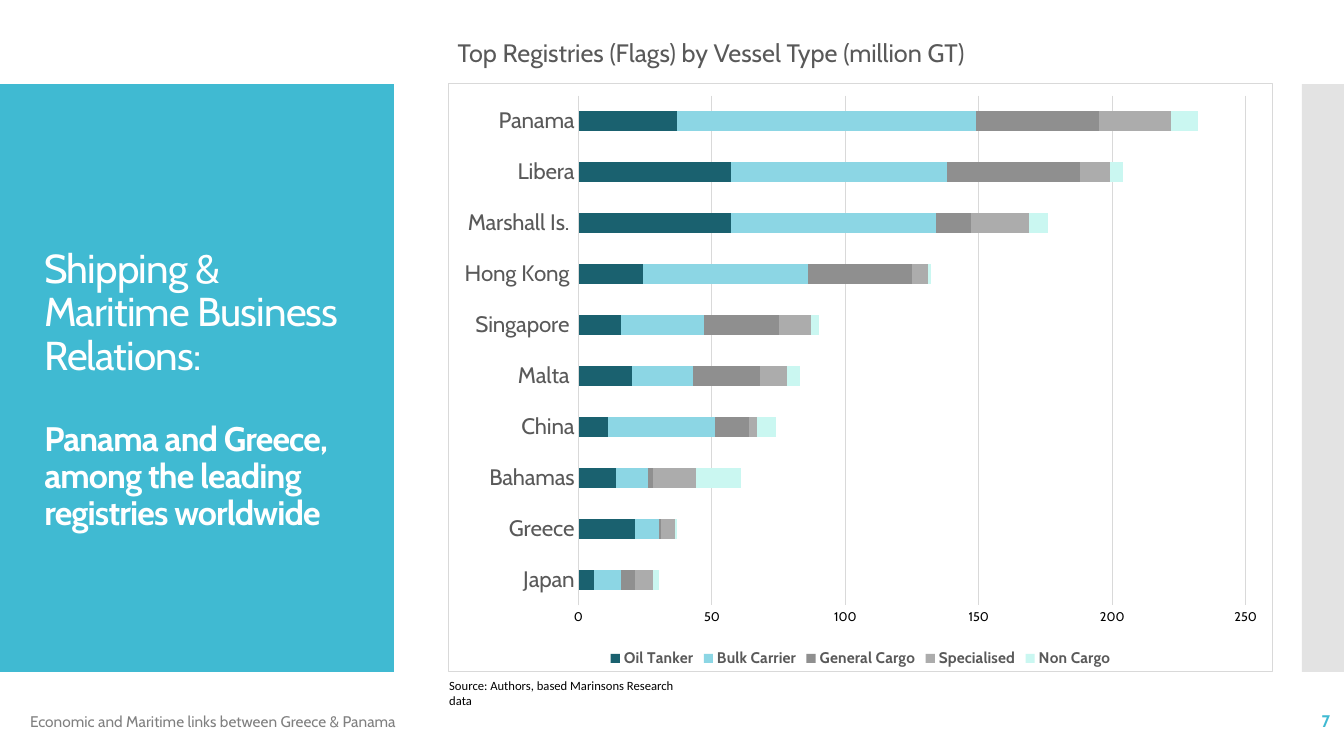
"""Build the slide on top ship registries by vessel type."""
from lxml import etree
from pptx import Presentation
from pptx.chart.data import CategoryChartData
from pptx.dml.color import RGBColor
from pptx.enum.chart import XL_CHART_TYPE as ChartType, XL_LEGEND_POSITION as LegendPosition
from pptx.enum.chart import XL_TICK_MARK as TickMark
from pptx.enum.shapes import MSO_SHAPE as Preset
from pptx.enum.text import MSO_ANCHOR as Anchor, PP_ALIGN as Align
from pptx.oxml import parse_xml
from pptx.oxml.ns import nsdecls, qn
from pptx.util import Inches, Pt

COLORS = {
    "white": "FFFFFF", "teal": "40BAD2", "strip": "C8C8C8", "text": "595959",
    "footer": "808080", "black": "000000", "rule": "D9D9D9",
}
FONT = "Cabin"
TITLE = "Shipping & Maritime Business Relations:"
SUBTITLE = "Panama and Greece, among the leading registries worldwide"
HEADING = "Top Registries (Flags) by Vessel Type (million GT)"
SOURCE = "Source: Authors, based Marinsons Research data"
FOOTER = "Economic and Maritime links between Greece & Panama"
PAGE = "7"

REGISTRIES = ["Japan", "Greece", "Bahamas", "China", "Malta ", "Singapore ",
              "Hong Kong ", "Marshall Is. ", "Libera", "Panama"]
VESSELS = [
    ("Oil Tanker", "1A616F", [6, 21, 14, 11, 20, 16, 24, 57, 57, 37]),
    ("Bulk Carrier", "8CD6E4", [10, 9, 12, 40, 23, 31, 62, 77, 81, 112]),
    ("General Cargo", "8F8F8F", [5, 1, 2, 13, 25, 28, 39, 13, 50, 46]),
    ("Specialised", "ACACAC", [7, 5, 16, 3, 10, 12, 6, 22, 11, 27]),
    ("Non Cargo", "CAF7F1", [2, 1, 17, 7, 5, 3, 1, 7, 5, 10]),
]

COLUMNS, ROWS = 32, 18
AREAS = {
    "panel": (0, 2, 9.38, 14),
    "strip": (31, 2, 1, 14),
    "title": (0.82, 5.28, 7.73, 8),
    "heading": (10.66, 0.86, 13, 1),
    "chart": (10.66, 1.97, 19.66, 14.04),
    "source": (10.46, 16.03, 6.36, 0.6),
    "page": (27.91, 16.68, 4, 0.96),
    "footer": (0.48, 16.7, 15.5, 0.96),
}
PLOT_SHARE = {"x": 0.158, "y": 0.021, "w": 0.809, "h": 0.866}

presentation = Presentation()
presentation.slide_width, presentation.slide_height = Inches(13.33), Inches(7.5)
slide = presentation.slides.add_slide(presentation.slide_layouts[6])


def place(name):
    left, top, width, height = AREAS[name]
    column = presentation.slide_width / COLUMNS
    row = presentation.slide_height / ROWS
    return int(left * column), int(top * row), int(width * column), int(height * row)


def rgb(name):
    return RGBColor.from_string(COLORS.get(name, name))


def style_font(font, size, color, bold=False, name=FONT):
    font.size, font.bold, font.name = Pt(size), bold, name
    font.color.rgb = rgb(color)


def add_block(name, color, opacity=100):
    block = slide.shapes.add_shape(Preset.RECTANGLE, *place(name))
    block.shadow.inherit = False
    block.fill.solid()
    block.fill.fore_color.rgb = rgb(color)
    block.line.fill.background()
    if opacity < 100:
        tint = block.fill._xPr.find(qn("a:solidFill"))[0]
        etree.SubElement(tint, qn("a:alpha")).set("val", str(opacity * 1000))


def add_text(text, area=None, frame=None, size=11, color="text", bold=False, font=FONT,
             align=Align.LEFT, anchor=Anchor.TOP, wrap=True, line=1.0, before=0, tracking=0):
    if frame is None:
        frame = slide.shapes.add_textbox(*place(area)).text_frame
        frame.word_wrap, frame.vertical_anchor = wrap, anchor
        paragraph = frame.paragraphs[0]
    else:
        paragraph = frame.add_paragraph()
    paragraph.alignment, paragraph.line_spacing = align, line
    paragraph.space_before = Pt(before)
    run = paragraph.add_run()
    run.text = text
    style_font(run.font, size, color, bold, font)
    if tracking:
        run.font._element.set("spc", str(int(tracking * 100)))
    return frame


def add_registry_chart():
    data = CategoryChartData()
    data.categories = REGISTRIES
    for vessel, _, tonnage in VESSELS:
        data.add_series(vessel, tonnage)
    chart = slide.shapes.add_chart(ChartType.BAR_STACKED, *place("chart"), data).chart
    style_font(chart.font, 10, "black")
    chart.has_title = False

    plot = chart.plots[0]
    plot.gap_width, plot.overlap, plot.vary_by_categories = 150, 100, False
    for series, (_, color, _) in zip(plot.series, VESSELS):
        series.format.fill.solid()
        series.format.fill.fore_color.rgb = rgb(color)

    registries, tonnage = chart.category_axis, chart.value_axis
    for axis, size, color in ((registries, 16, "text"), (tonnage, 9, "black")):
        axis.major_tick_mark = axis.minor_tick_mark = TickMark.NONE
        style_font(axis.tick_labels.font, size, color)
    registries.has_major_gridlines = False
    tonnage.minimum_scale, tonnage.maximum_scale, tonnage.major_unit = 0, 250, 50
    tonnage.has_major_gridlines = True
    tonnage.format.line.fill.background()
    for line in (registries.format.line, tonnage.major_gridlines.format.line):
        line.color.rgb, line.width = rgb("rule"), Pt(0.75)

    chart.has_legend = True
    chart.legend.position = LegendPosition.BOTTOM
    chart.legend.include_in_layout = False
    style_font(chart.legend.font, 11, "text", bold=True)
    finish_chart_area(chart._chartSpace)


def finish_chart_area(space):
    plot_area = space.chart.plotArea
    for layout in plot_area.findall(qn("c:layout")):
        plot_area.remove(layout)
    modes = '<c:layoutTarget val="inner"/><c:xMode val="edge"/><c:yMode val="edge"/>'
    shares = "".join(f'<c:{key} val="{share}"/>' for key, share in PLOT_SHARE.items())
    plot_area.insert(0, parse_xml(
        f'<c:layout {nsdecls("c")}><c:manualLayout>{modes}{shares}</c:manualLayout></c:layout>'))
    space.chart.addnext(parse_xml(
        f'<c:spPr {nsdecls("c", "a")}>'
        f'<a:solidFill><a:srgbClr val="{COLORS["white"]}"/></a:solidFill>'
        f'<a:ln w="{Pt(0.75)}"><a:solidFill><a:srgbClr val="{COLORS["rule"]}"/></a:solidFill></a:ln>'
        '</c:spPr>'))


def main():
    add_block("panel", "teal")
    title = add_text(TITLE, "title", size=28.8, color="white", anchor=Anchor.BOTTOM,
                     line=0.9, tracking=-0.6)
    title.margin_bottom = Inches(0.25)
    add_text(SUBTITLE, frame=title, size=24.3, color="white", bold=True,
             line=0.9, before=31, tracking=-0.6)
    add_text(HEADING, "heading", size=18, line=0.9)
    add_block("strip", "strip", opacity=50)
    add_registry_chart()
    add_text(SOURCE, "source", size=9, color="black", font="Calibri", wrap=False)
    add_text(PAGE, "page", size=12, color="teal", bold=True, align=Align.RIGHT,
             anchor=Anchor.MIDDLE)
    add_text(FOOTER, "footer", color="footer", anchor=Anchor.MIDDLE)
    presentation.save("out.pptx")


if __name__ == "__main__":
    main()
